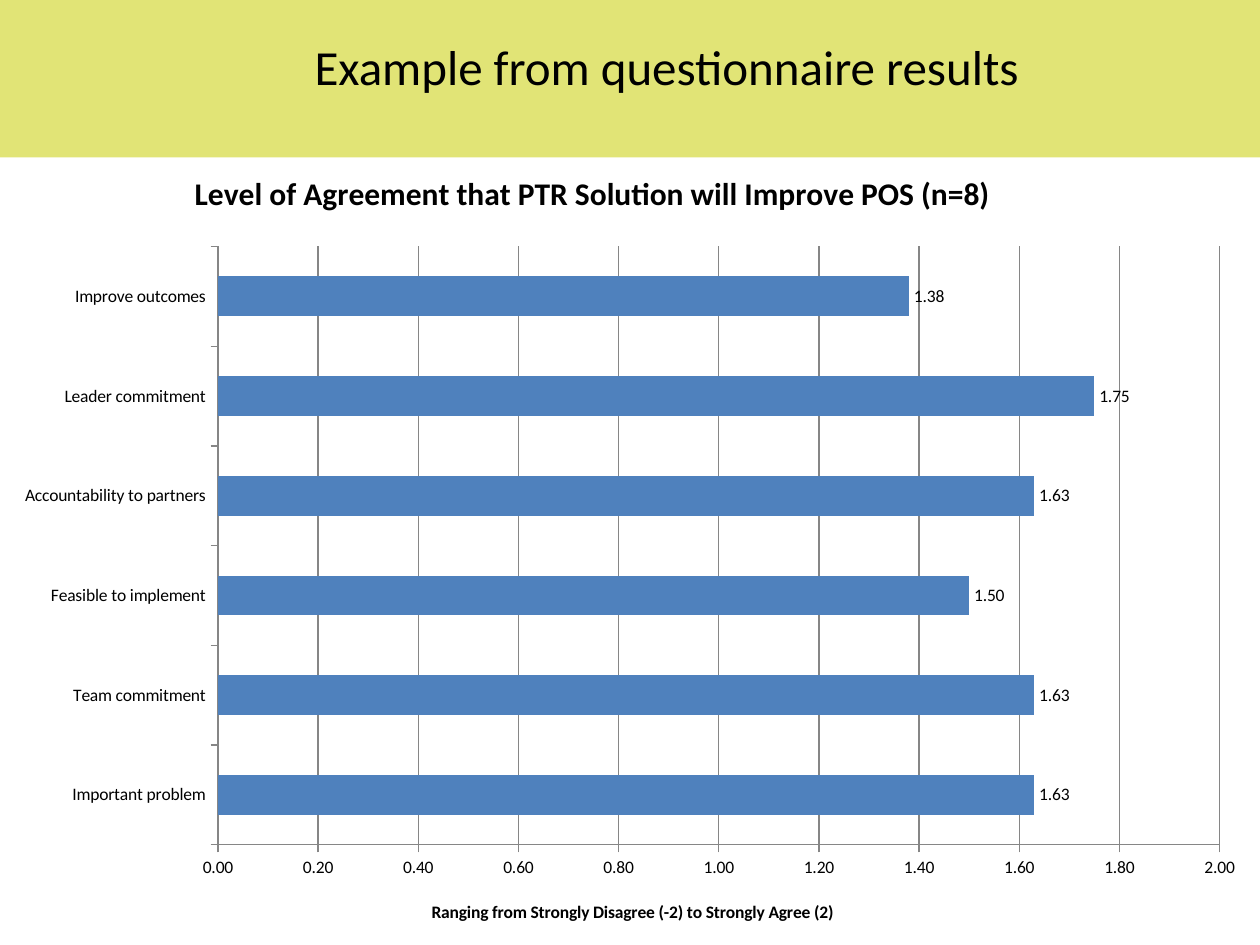
import pptx
import pptx.chart.data
import pptx.dml.color
import pptx.enum.chart
import pptx.enum.shapes
import pptx.enum.text
import pptx.oxml
import pptx.oxml.ns
import pptx.util

BLACK = pptx.dml.color.RGBColor(0x00, 0x00, 0x00)
GRAY = pptx.dml.color.RGBColor(0x86, 0x86, 0x86)
BLUE = pptx.dml.color.RGBColor(0x4F, 0x81, 0xBD)
LIME = pptx.dml.color.RGBColor(0xE1, 0xE4, 0x76)
FONT = "Calibri"


def style_font(font, size, bold=False):
    font.name = FONT
    font.size = pptx.util.Pt(size)
    font.bold = bold
    font.color.rgb = BLACK


def place(element, position, **shares):
    for old in element.findall(pptx.oxml.ns.qn("c:layout")):
        element.remove(old)
    target = '<c:layoutTarget val="inner"/>' if "w" in shares else ""
    modes = "".join(f'<c:{side}Mode val="edge"/>' for side in "xy")
    values = "".join(f'<c:{side} val="{share}"/>' for side, share in shares.items())
    element.insert(position, pptx.oxml.parse_xml(
        f'<c:layout {pptx.oxml.ns.nsdecls("c")}><c:manualLayout>'
        f'{target}{modes}{values}</c:manualLayout></c:layout>'))


deck = pptx.Presentation()
deck.slide_width = pptx.util.Inches(10)
deck.slide_height = pptx.util.Inches(7.5)
width, height = deck.slide_width, deck.slide_height
page = deck.slides.add_slide(deck.slide_layouts[6])

band_height = height // 6
band = page.shapes.add_shape(
    pptx.enum.shapes.MSO_SHAPE.RECTANGLE, 0, 0, width, band_height)
band.shadow.inherit = False
band.fill.solid()
band.fill.fore_color.rgb = LIME
band.line.fill.background()

data = pptx.chart.data.CategoryChartData(number_format="0.00")
data.categories = ["Important problem", "Team commitment", "Feasible to implement",
                   "Accountability to partners", "Leader commitment", "Improve outcomes"]
data.add_series("Series 1", [1.63, 1.63, 1.5, 1.63, 1.75, 1.38])
chart = page.shapes.add_chart(
    pptx.enum.chart.XL_CHART_TYPE.BAR_CLUSTERED,
    0, band_height, width, height - band_height, data).chart
style_font(chart.font, 10)
chart.has_legend = False

value_axis, category_axis = chart.value_axis, chart.category_axis
value_axis.minimum_scale = 0
value_axis.maximum_scale = 2
value_axis.major_unit = 0.2
value_axis.has_major_gridlines = True
value_axis.tick_labels.number_format = "0.00"
value_axis.tick_labels.number_format_is_linked = False
category_axis.tick_label_position = pptx.enum.chart.XL_TICK_LABEL_POSITION.LOW
for axis in (value_axis, category_axis):
    axis.major_tick_mark = pptx.enum.chart.XL_TICK_MARK.OUTSIDE
for line in (value_axis.format.line, category_axis.format.line,
             value_axis.major_gridlines.format.line):
    line.color.rgb = GRAY
    line.width = pptx.util.Pt(0.75)

for title, words, size, left, top in (
        (chart.chart_title, "Level of Agreement that PTR Solution will Improve POS (n=8)",
         18, 0.15, 0.01),
        (value_axis.axis_title, "Ranging from Strongly Disagree (-2) to Strongly Agree (2)",
         10, 0.34, 0.94)):
    title.text_frame.text = words
    style_font(title.text_frame.paragraphs[0].runs[0].font, size, True)
    place(title._element, 1, x=left, y=top)
place(chart._chartSpace.chart.plotArea, 0, x=0.173, y=0.113, w=0.795, h=0.76)

plot = chart.plots[0]
plot.gap_width = 150
plot.vary_by_categories = False
plot.series[0].format.fill.solid()
plot.series[0].format.fill.fore_color.rgb = BLUE
labels = plot.series[0].data_labels
labels.show_value = True
labels.number_format = "0.00"
labels.number_format_is_linked = False
labels.position = pptx.enum.chart.XL_LABEL_POSITION.OUTSIDE_END
style_font(labels.font, 10)

box = page.shapes.add_textbox(
    pptx.util.Inches(2.33), pptx.util.Inches(0.24),
    pptx.util.Inches(5.92), pptx.util.Inches(0.57))
box.text_frame.word_wrap = True
box.text_frame.auto_size = pptx.enum.text.MSO_AUTO_SIZE.SHAPE_TO_FIT_TEXT
para = box.text_frame.paragraphs[0]
para.text = "Example from questionnaire results"
para.alignment = pptx.enum.text.PP_ALIGN.CENTER
style_font(para.runs[0].font, 28)

deck.save("out.pptx")
